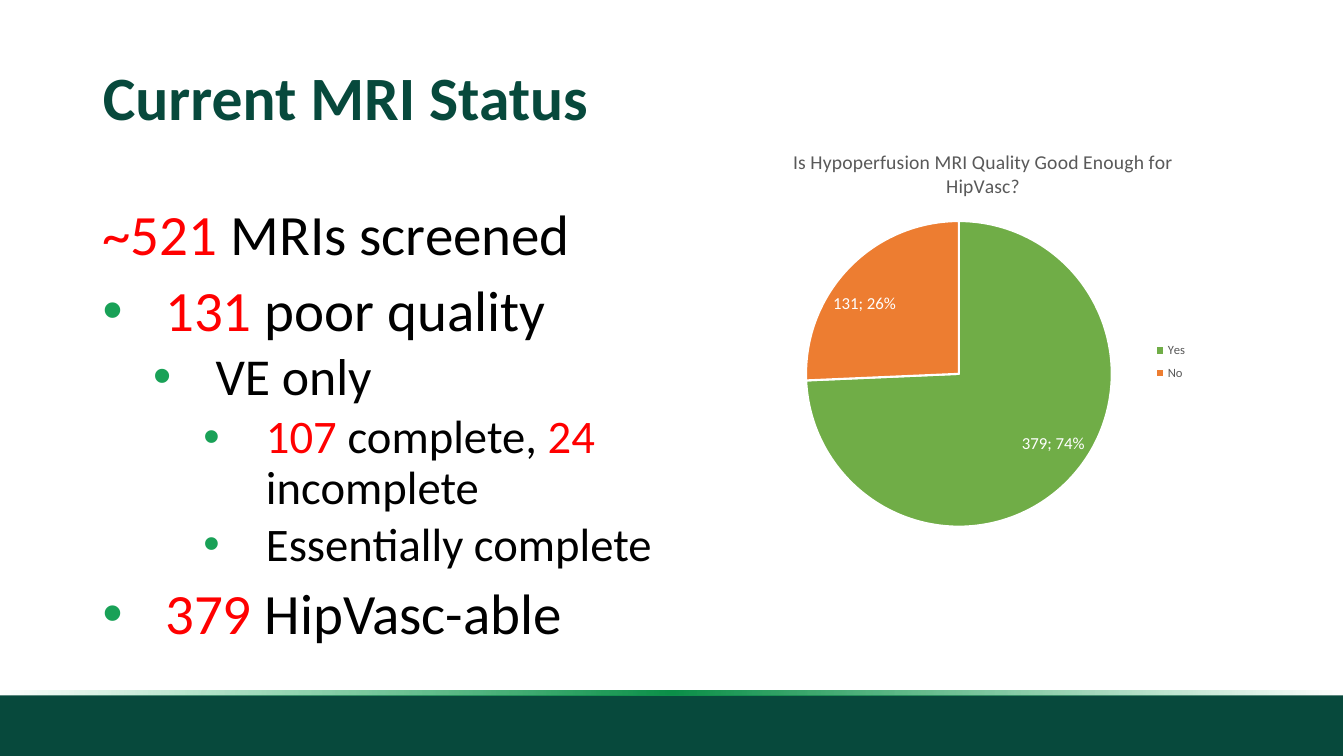
"""Build the MRI status slide with a bulleted summary and a quality pie chart."""
import pptx
import pptx.chart.data
import pptx.dml.color
import pptx.enum.chart
import pptx.enum.shapes
import pptx.enum.text
import pptx.oxml
import pptx.oxml.ns
import pptx.util

PX = 9144
THEME = {
    "font": "Calibri",
    "green": "07493C", "bullet": "19A157", "number": "FF0000", "text": "000000",
    "yes": "70AD47", "no": "ED7D31", "white": "FFFFFF", "grey": "595959",
    "stripe": [(0, "0D9D4F", 0), (50, "0C9049", 100), (100, "0FAB56", 0)],
    "title": 44, "levels": [40.7, 37, 33.3],
    "chart": 10, "chart_title": 14, "legend": 9, "label": 12,
}


def style_text(font, text=None, paragraph=None, size=12, color="text", bold=False):
    """Format a font, or add a formatted run of text to a paragraph."""
    if paragraph is not None:
        run = paragraph.add_run()
        run.text = text
        font = run.font
    font.name = THEME["font"]
    font.size = pptx.util.Pt(size)
    font.bold = bold
    font.color.rgb = pptx.dml.color.RGBColor.from_string(THEME[color])


def place_in_chart(part, index, x, y, w, h, target=""):
    """Give a chart part a manual layout in fractions of the chart."""
    for old in part.findall(pptx.oxml.ns.qn("c:layout")):
        part.remove(old)
    part.insert(index, pptx.oxml.parse_xml(
        f'<c:layout {pptx.oxml.ns.nsdecls("c")}><c:manualLayout>{target}'
        '<c:xMode val="edge"/><c:yMode val="edge"/>'
        f'<c:x val="{x}"/><c:y val="{y}"/><c:w val="{w}"/><c:h val="{h}"/>'
        '</c:manualLayout></c:layout>'))


deck = pptx.Presentation()
deck.slide_width, deck.slide_height = 1333 * PX, 750 * PX
slide = deck.slides.add_slide(deck.slide_layouts[5])

bars = []
for top, width, height in [(690, 1332, 60), (685, 1333, 5)]:
    bar = slide.shapes.add_shape(pptx.enum.shapes.MSO_SHAPE.RECTANGLE,
                                 0, top * PX, width * PX, height * PX)
    bar.shadow.inherit = False
    bar.line.fill.background()
    bars.append(bar)
footer, stripe = bars
footer.fill.solid()
footer.fill.fore_color.rgb = pptx.dml.color.RGBColor.from_string(THEME["green"])
stops = "".join(
    f'<a:gs pos="{position * 1000}"><a:srgbClr val="{color}">'
    f'<a:alpha val="{opacity * 1000}"/></a:srgbClr></a:gs>'
    for position, color, opacity in THEME["stripe"])
stripe_geometry = stripe._element.spPr.find(pptx.oxml.ns.qn("a:prstGeom"))
stripe_geometry.addnext(pptx.oxml.parse_xml(
    f'<a:gradFill {pptx.oxml.ns.nsdecls("a")}><a:gsLst>{stops}</a:gsLst>'
    '<a:lin ang="10800000" scaled="0"/></a:gradFill>'))

heading = slide.shapes.title
heading.left, heading.top, heading.width, heading.height = (
    n * PX for n in (92, 40, 1150, 119))
heading.text_frame.vertical_anchor = pptx.enum.text.MSO_ANCHOR.MIDDLE
heading_line = heading.text_frame.paragraphs[0]
heading_line.alignment = pptx.enum.text.PP_ALIGN.LEFT
heading_line.line_spacing = 0.9
style_text(None, "Current MRI Status", heading_line,
           size=THEME["title"], color="green", bold=True)

findings = [
    (0, False, [("~521", "number"), (" MRIs screened", "text")]),
    (0, True, [("131", "number"), (" poor quality", "text")]),
    (1, True, [("VE only", "text")]),
    (2, True, [("107 ", "number"), ("complete,", "text"),
               (" 24 ", "number"), ("incomplete", "text")]),
    (2, True, [("Essentially complete", "text")]),
    (0, True, [("379", "number"), (" HipVasc-able", "text")]),
]
summary = slide.shapes.add_textbox(92 * PX, 200 * PX, 567 * PX, 476 * PX).text_frame
summary.word_wrap = True
for row, (level, bulleted, pieces) in enumerate(findings):
    finding = summary.add_paragraph() if row else summary.paragraphs[0]
    finding.level = level
    finding.line_spacing = 0.9
    finding.space_before = pptx.util.Pt((5 if level else 10) if row else 0)
    if bulleted:
        properties = finding._p.get_or_add_pPr()
        properties.set("marL", str((62 + 50 * level) * PX))
        properties.set("indent", str(-62 * PX))
        for bullet in (f'buClr {{}}><a:srgbClr val="{THEME["bullet"]}"/></a:buClr>',
                       'buFont {} typeface="Arial"/>', 'buChar {} char="•"/>'):
            properties.append(pptx.oxml.parse_xml(
                "<a:" + bullet.format(pptx.oxml.ns.nsdecls("a"))))
    for words, color in pieces:
        style_text(None, words, finding, size=THEME["levels"][level], color=color)

quality = pptx.chart.data.CategoryChartData()
quality.categories = ["Yes", "No"]
quality.add_series("Series 1", [379, 131])
chart = slide.shapes.add_chart(pptx.enum.chart.XL_CHART_TYPE.PIE, 709 * PX, 130 * PX,
                               532 * PX, 405 * PX, quality).chart
style_text(chart.font, size=THEME["chart"])
chart.has_title = True
style_text(None, "Is Hypoperfusion MRI Quality Good Enough for HipVasc?",
           chart.chart_title.text_frame.paragraphs[0],
           size=THEME["chart_title"], color="grey")
chart.has_legend = True
chart.legend.position = pptx.enum.chart.XL_LEGEND_POSITION.RIGHT
chart.legend.include_in_layout = False
style_text(chart.legend.font, size=THEME["legend"], color="grey")

pie = chart.plots[0]
pie.vary_by_categories = True
answers = pie.series[0]
for index, color in enumerate(["yes", "no"]):
    wedge = answers.points[index].format
    wedge.fill.solid()
    wedge.fill.fore_color.rgb = pptx.dml.color.RGBColor.from_string(THEME[color])
    wedge.line.color.rgb = pptx.dml.color.RGBColor.from_string(THEME["white"])
    wedge.line.width = pptx.util.Pt(1.5)
labels = answers.data_labels
labels.show_value = True
labels.show_percentage = True
labels.position = pptx.enum.chart.XL_LABEL_POSITION.BEST_FIT
style_text(labels.font, size=THEME["label"], color="white")
labels._element.find(pptx.oxml.ns.qn("c:showBubbleSize")).addnext(pptx.oxml.parse_xml(
    f'<c:separator {pptx.oxml.ns.nsdecls("c")}>; </c:separator>'))

place_in_chart(chart._chartSpace.chart.plotArea, 0, 0.17, 0.22, 0.57, 0.75,
               '<c:layoutTarget val="inner"/>')
place_in_chart(chart.legend._element, 1, 0.81, 0.5, 0.08, 0.13)

deck.save("out.pptx")
